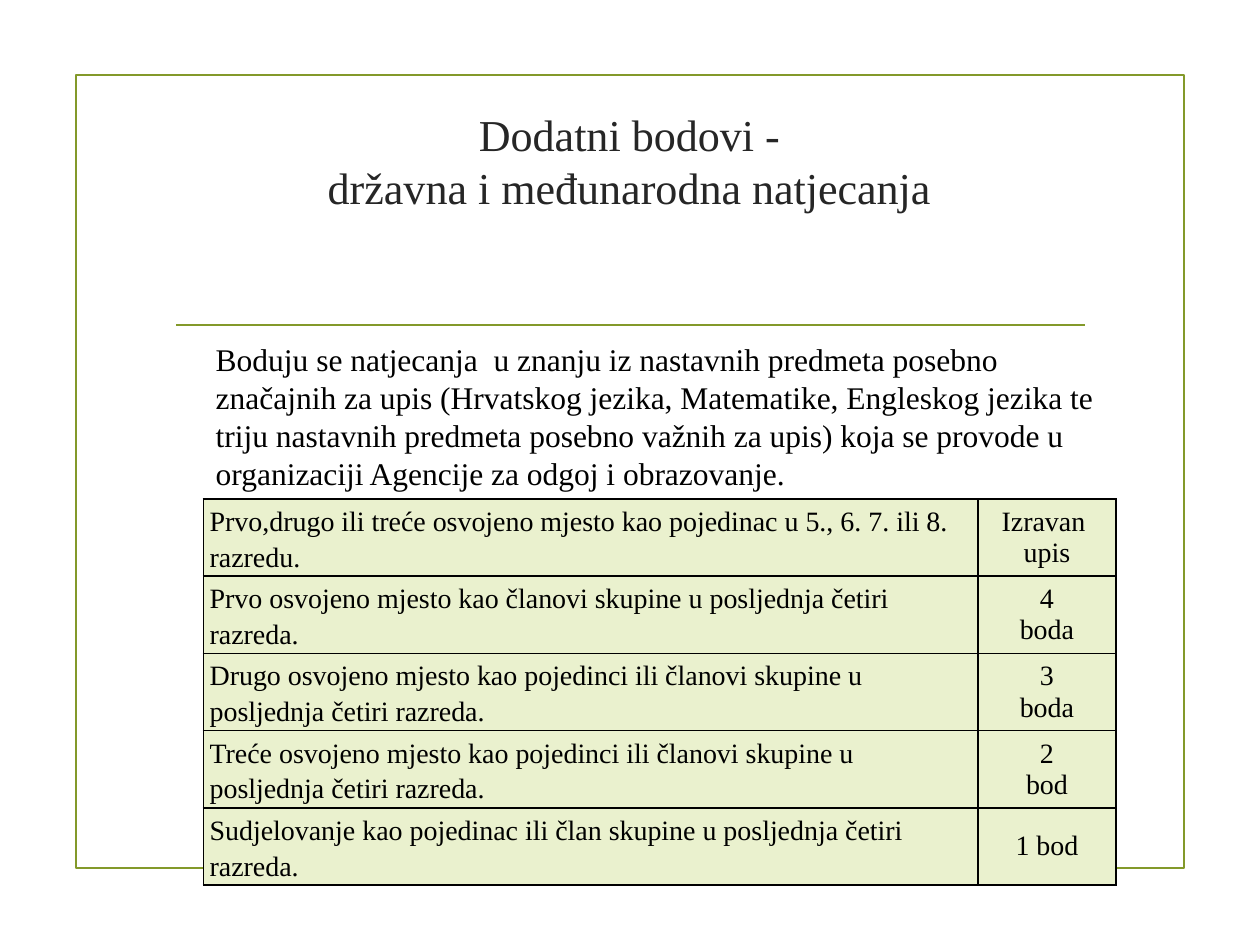
import pptx
import pptx.util
import pptx.dml.color
import pptx.enum.shapes
import pptx.enum.text
import pptx.oxml
import pptx.oxml.ns
from pptx.util import Pt

GREEN = "83992A"
BLACK = "000000"
ALIGN = pptx.enum.text.PP_ALIGN
MIDDLE = pptx.enum.text.MSO_ANCHOR.MIDDLE


def color(hex_string):
    return pptx.dml.color.RGBColor.from_string(hex_string)


def write_text(frame, text, size=16, hex_color=BLACK, align=ALIGN.LEFT, spacing=None):
    """Each line is a paragraph; a vertical tab is a line break."""
    frame.word_wrap = True
    for index, line in enumerate(text.split("\n")):
        paragraph = frame.paragraphs[0] if index == 0 else frame.add_paragraph()
        paragraph.text = line
        paragraph.alignment = align
        if spacing:
            paragraph.line_spacing = spacing
        for run in paragraph.runs:
            run.font.name = "Times New Roman"
            run.font.size = Pt(size)
            run.font.color.rgb = color(hex_color)


presentation = pptx.Presentation()
presentation.slide_width = Pt(720)
presentation.slide_height = Pt(540)
slide = presentation.slides.add_slide(presentation.slide_layouts[6])

# Frame
frame_shape = slide.shapes.add_shape(
    pptx.enum.shapes.MSO_SHAPE.RECTANGLE, Pt(43.6), Pt(42.8), Pt(633), Pt(453.4))
frame_shape.shadow.inherit = False
frame_shape.fill.background()
frame_shape.line.color.rgb = color(GREEN)
frame_shape.line.width = Pt(1.25)

# Divider below the title
divider = slide.shapes.add_connector(
    pptx.enum.shapes.MSO_CONNECTOR.STRAIGHT, Pt(100.6), Pt(185.6), Pt(620), Pt(185.6))
divider.line.color.rgb = color(GREEN)
divider.line.width = Pt(1.25)
divider._element.spPr.append(pptx.oxml.parse_xml(
    f'<a:effectLst {pptx.oxml.ns.nsdecls("a")}/>'))

# Title
title = slide.shapes.add_textbox(Pt(43.2), Pt(60.5), Pt(633), Pt(62.6))
title.text_frame.vertical_anchor = MIDDLE
write_text(title.text_frame, "Dodatni bodovi -\vdržavna i međunarodna natjecanja",
           size=25.2, hex_color="262626", align=ALIGN.CENTER)

# Table of points
rows = [
    ("Prvo,drugo ili treće osvojeno mjesto kao pojedinac u 5., 6. 7. ili 8. razredu.",
     "Izravan \nupis"),
    ("Prvo osvojeno mjesto kao članovi skupine u posljednja četiri razreda.", "4\nboda"),
    ("Drugo osvojeno mjesto kao pojedinci ili članovi skupine u posljednja četiri razreda.",
     "3\nboda"),
    ("Treće osvojeno mjesto kao pojedinci ili članovi skupine u posljednja četiri razreda.",
     "2\nbod"),
    ("Sudjelovanje kao pojedinac ili član skupine u posljednja četiri razreda.", "1 bod"),
]
table = slide.shapes.add_table(
    len(rows), 2, Pt(116.2), Pt(285.1), Pt(521.6), Pt(205)).table
table.columns[0].width = Pt(442.6)
table.columns[1].width = Pt(79)
for row_index, row in enumerate(rows):
    table.rows[row_index].height = Pt(41)
    for column_index, text in enumerate(row):
        cell = table.cell(row_index, column_index)
        cell.margin_left = cell.margin_right = Pt(3.6)
        cell.margin_top = cell.margin_bottom = Pt(0)
        cell.vertical_anchor = MIDDLE
        if column_index == 0:
            write_text(cell.text_frame, text, spacing=1.15)
        else:
            write_text(cell.text_frame, text, align=ALIGN.CENTER)
        # Borders come before the fill in the cell properties
        properties = cell._tc.get_or_add_tcPr()
        for side in ("lnL", "lnR", "lnT", "lnB"):
            properties.append(pptx.oxml.parse_xml(
                f'<a:{side} {pptx.oxml.ns.nsdecls("a")} w="{Pt(1)}"><a:solidFill>'
                f'<a:srgbClr val="{BLACK}"/></a:solidFill></a:{side}>'))
        cell.fill.solid()
        cell.fill.fore_color.rgb = color("EAF1CE")

# Introductory paragraph
introduction = slide.shapes.add_textbox(Pt(116.2), Pt(190.8), Pt(521.6), Pt(94.3))
write_text(
    introduction.text_frame,
    "Boduju se natjecanja  u znanju iz nastavnih predmeta posebno značajnih za upis "
    "(Hrvatskog jezika, Matematike, Engleskog jezika te triju nastavnih predmeta posebno "
    "važnih za upis) koja se provode u organizaciji Agencije za odgoj i obrazovanje.",
    size=18)

presentation.save("out.pptx")
